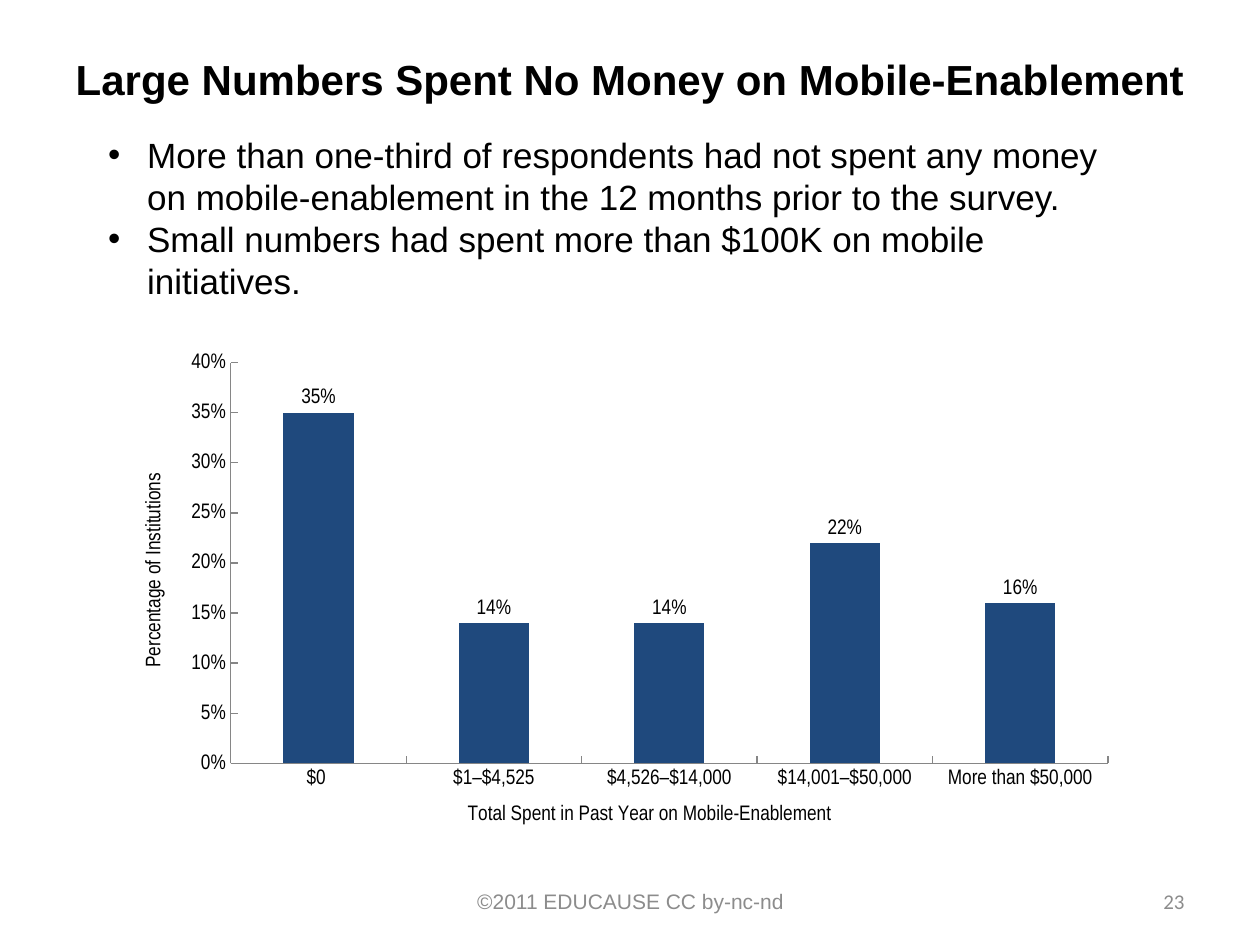
from lxml import etree
from pptx import Presentation, util as u
from pptx.chart.data import CategoryChartData
from pptx.dml.color import RGBColor
from pptx.enum import chart as ch, text
from pptx.oxml import parse_xml
from pptx.oxml.ns import nsdecls, qn

BLACK = RGBColor(0x00, 0x00, 0x00)
GREY = RGBColor(0x8C, 0x8C, 0x8C)
NAVY = RGBColor(0x1F, 0x49, 0x7D)
AXIS_GREY = RGBColor(0x86, 0x86, 0x86)

deck = Presentation()
deck.slide_width, deck.slide_height = u.Inches(10), u.Inches(7.5)
slide = deck.slides.add_slide(deck.slide_layouts[5])


def style(font, size, face, color, bold=False):
    font.size, font.name, font.bold = u.Pt(size), face, bold
    font.color.rgb = color


def box(left, top, width, height):
    """Left, top, width and height as shares of the slide."""
    return (int(deck.slide_width * left), int(deck.slide_height * top),
            int(deck.slide_width * width), int(deck.slide_height * height))


# Title
title = slide.shapes.title
title.left, title.top, title.width, title.height = box(0.05, 0.028, 0.9, 0.11)
title.text_frame.vertical_anchor = text.MSO_ANCHOR.MIDDLE
heading = title.text_frame.paragraphs[0]
heading.alignment = text.PP_ALIGN.CENTER
run = heading.add_run()
run.text = "Large Numbers Spent No Money on Mobile-Enablement"
style(run.font, 24, "Arial", BLACK, bold=True)

# Spending chart
spending = CategoryChartData(number_format="0%")
spending.categories = ["$0 ", "$1–$4,525", "$4,526–$14,000",
                       "$14,001–$50,000", "More than $50,000"]
spending.add_series("Series 1", (0.35, 0.14, 0.14, 0.22, 0.16))
chart = slide.shapes.add_chart(ch.XL_CHART_TYPE.COLUMN_CLUSTERED,
                               *box(0.074, 0.359, 0.821, 0.551), spending).chart
chart.has_legend = chart.has_title = False
style(chart.font, 12, "Arial Narrow", BLACK)

bars = chart.plots[0]
bars.gap_width = 150
bars.vary_by_categories = False
bars.series[0].format.fill.solid()
bars.series[0].format.fill.fore_color.rgb = NAVY
labels = bars.series[0].data_labels
labels.show_value = True
labels.number_format, labels.number_format_is_linked = "0%", False
labels.position = ch.XL_LABEL_POSITION.OUTSIDE_END

for axis, caption in ((chart.category_axis, "Total Spent in Past Year on Mobile-Enablement"),
                      (chart.value_axis, "Percentage of Institutions")):
    axis.has_major_gridlines = False
    axis.major_tick_mark = ch.XL_TICK_MARK.INSIDE
    axis.minor_tick_mark = ch.XL_TICK_MARK.NONE
    axis.format.line.color.rgb = AXIS_GREY
    run = axis.axis_title.text_frame.paragraphs[0].add_run()
    run.text = caption
    style(run.font, 12, "Arial Narrow", BLACK)
percent = chart.value_axis
percent.minimum_scale, percent.maximum_scale, percent.major_unit = 0, 0.4, 0.05
percent.tick_labels.number_format = "0%"
percent.tick_labels.number_format_is_linked = False

# Inner plot area as shares of the chart
plot_area = bars._element.getparent()
for old_layout in plot_area.findall(qn("c:layout")):
    plot_area.remove(old_layout)
layout = parse_xml(f'<c:layout {nsdecls("c")}><c:manualLayout/></c:layout>')
for tag, value in (("layoutTarget", "inner"), ("xMode", "edge"), ("yMode", "edge"),
                   ("x", "0.133"), ("y", "0.045"), ("w", "0.848"), ("h", "0.77")):
    etree.SubElement(layout[0], qn(f"c:{tag}")).set("val", value)
plot_area.insert(0, layout)

# Footer and page number
for place, words, face, alignment in (
        (box(0.342, 0.927, 0.317, 0.053), "©2011 EDUCAUSE CC by-nc-nd", "Arial",
         text.PP_ALIGN.CENTER),
        (box(0.717, 0.927, 0.233, 0.053), "23", "Calibri", text.PP_ALIGN.RIGHT)):
    footer = slide.shapes.add_textbox(*place).text_frame
    footer.word_wrap = True
    footer.vertical_anchor = text.MSO_ANCHOR.MIDDLE
    footer.paragraphs[0].alignment = alignment
    run = footer.paragraphs[0].add_run()
    run.text = words
    style(run.font, 12, face, GREY)

# Findings
findings = slide.shapes.add_textbox(*box(0.076, 0.135, 0.817, 0.193)).text_frame
findings.word_wrap = True
findings.auto_size = text.MSO_AUTO_SIZE.SHAPE_TO_FIT_TEXT
for number, finding in enumerate((
        "More than one-third of respondents had not spent any money on "
        "mobile-enablement in the 12 months prior to the survey.",
        "Small numbers had spent more than $100K on mobile initiatives.")):
    item = findings.add_paragraph() if number else findings.paragraphs[0]
    props = item._p.get_or_add_pPr()
    props.set("marL", str(u.Inches(0.31)))
    props.set("indent", str(u.Inches(-0.31)))
    etree.SubElement(props, qn("a:buFont")).set("typeface", "Arial")
    etree.SubElement(props, qn("a:buChar")).set("char", "•")
    run = item.add_run()
    run.text = finding
    style(run.font, 20, "Arial", BLACK)

deck.save("out.pptx")
